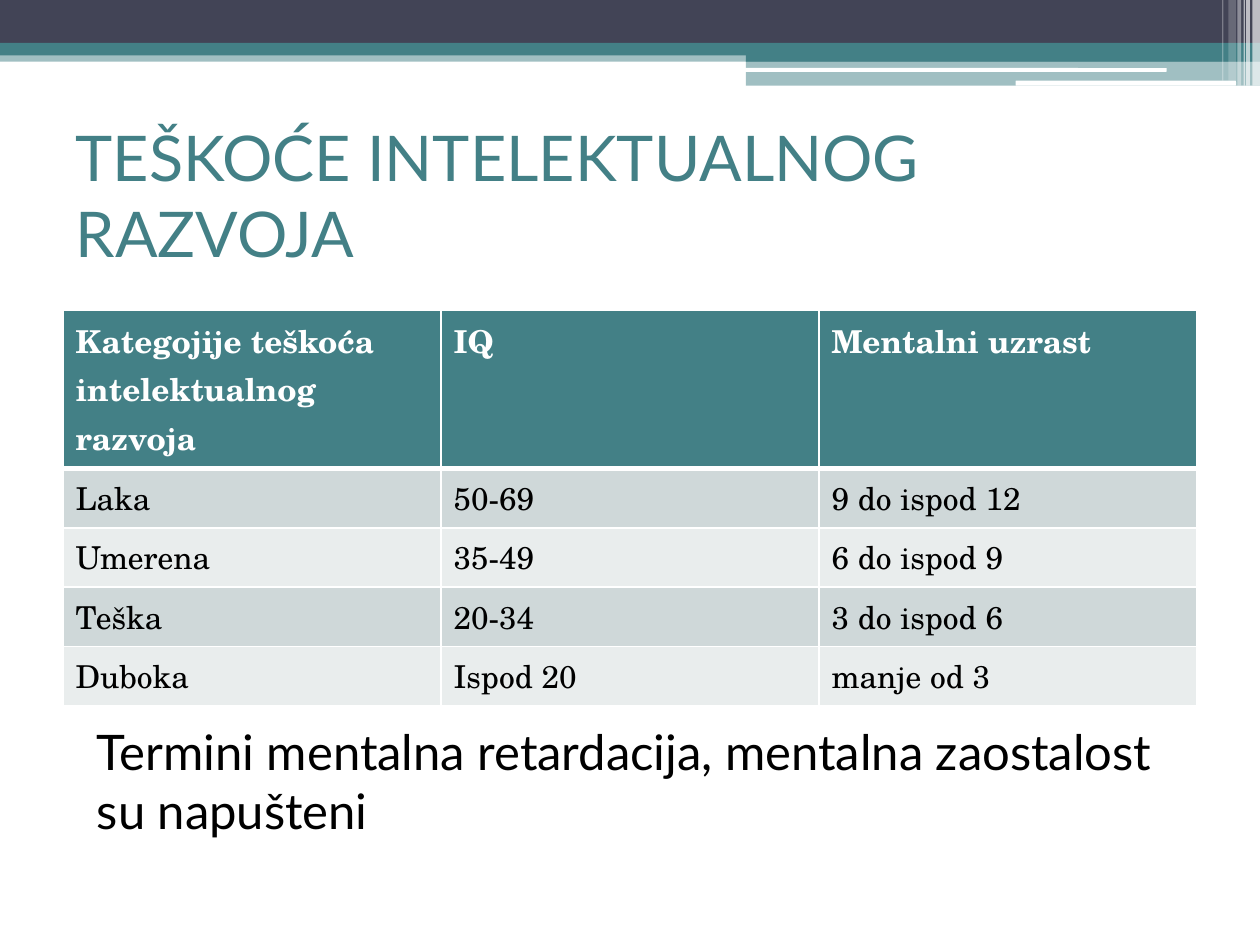
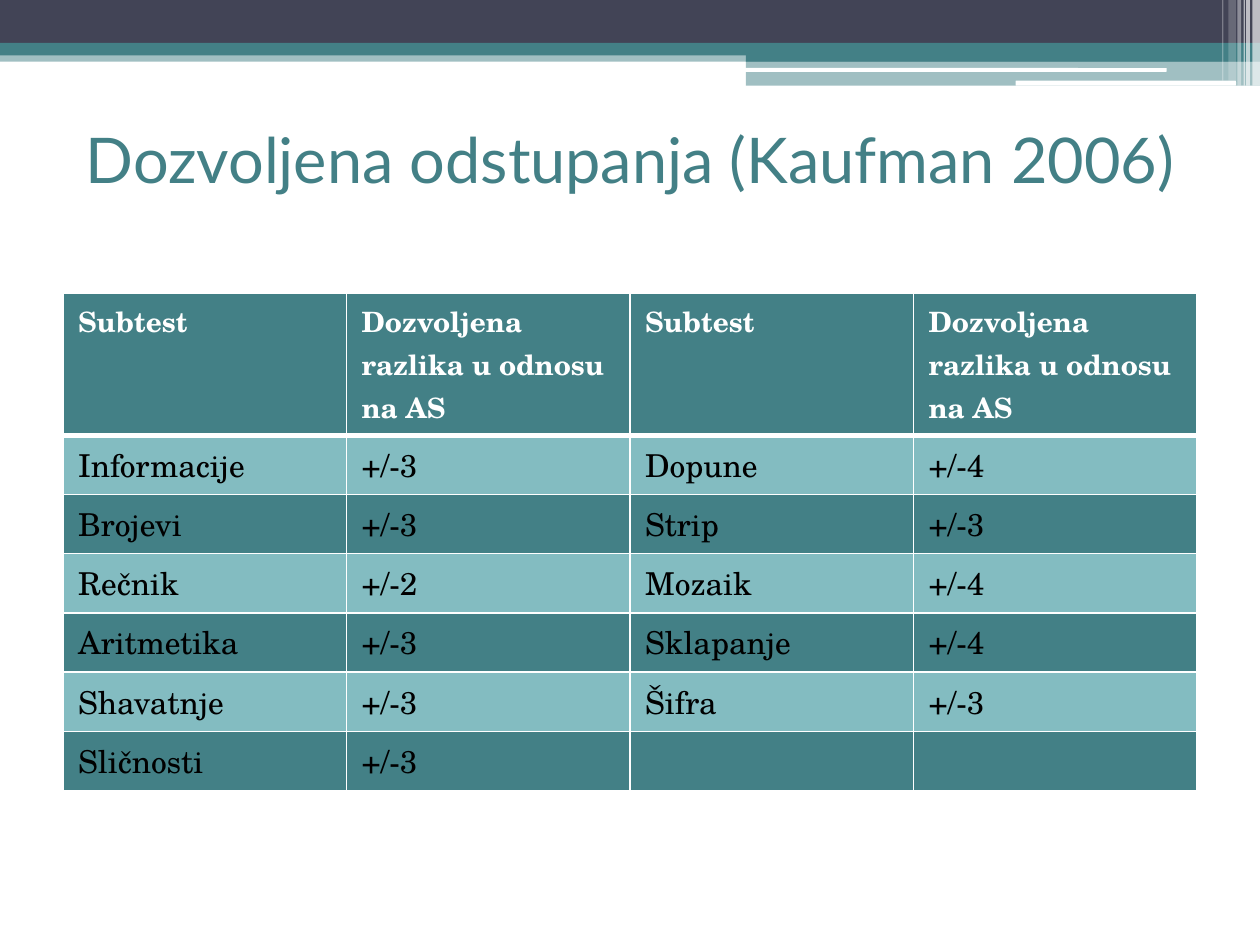
import pptx
import pptx.dml.color
import pptx.enum.shapes
import pptx.enum.text
import pptx.oxml
import pptx.oxml.ns
import pptx.util

TEAL, SLATE, WHITE, BLACK = "438086", "424456", "FFFFFF", "000000"
TITLE_FONT, TABLE_FONT = "Lato", "TeX Gyre Schola"
WIDTH, HEIGHT = 10, 7.5
MARGIN = 0.5
ROW_HEIGHT = 0.47
TITLE_ONLY_LAYOUT = 5

# left, top, width, height, colour, opacity in percent
BANDS = [
    (0, 0.4, WIDTH, 0.09, TEAL, 50),
    (0, 0, WIDTH, 0.34, SLATE, 100),
    (0, 0.34, WIDTH, 0.1, TEAL, 100),
    (5.92, 0.39, 4.08, 0.1, TEAL, 100),
    (5.92, 0.48, 4.08, 0.2, TEAL, 50),
]
ROUNDED_BARS = [
    (5.91, 0.54, 3.35, 0.03, WHITE, 100),
    (8.06, 0.64, 1.75, 0.04, WHITE, 100),
]
# left, width, height, opacity in percent
STRIPES = [
    (9.94, 0.06, 0.68, 65),
    (9.89, 0.03, 0.68, 65),
    (9.87, 0.01, 0.68, 60),
    (9.82, 0.03, 0.68, 40),
    (9.75, 0.06, 0.64, 20),
    (9.7, 0.01, 0.64, 30),
]

SLIDES = [
    {
        "title": "TEŠKOĆE INTELEKTUALNOG RAZVOJA",
        "title_box": (0.5, 1, 9, 1.08),
        "rows": [
            ("Kategojije teškoća intelektualnog razvoja", "IQ", "Mentalni uzrast"),
            ("Laka", "50-69", "9 do ispod 12"),
            ("Umerena", "35-49", "6 do ispod 9"),
            ("Teška", "20-34", "3 do ispod 6"),
            ("Duboka", "Ispod 20", "manje od 3"),
        ],
        "table_top": 2.46,
        "header_height": 1.25,
        "header_size": 18,
        "inset": 0.1,
        "row_fills": ("CFD8D9", "E9EDED"),
        "remark": "Termini mentalna retardacija, mentalna zaostalost su napušteni",
    },
    {
        "title": "Dozvoljena odstupanja (Kaufman 2006)",
        "title_box": (0.58, 0.67, 9, 1.17),
        "rows": [
            ("Subtest", "Dozvoljena razlika u odnosu na AS") * 2,
            ("Informacije", "+/-3", "Dopune", "+/-4"),
            ("Brojevi", "+/-3", "Strip", "+/-3"),
            ("Rečnik", "+/-2", "Mozaik", "+/-4"),
            ("Aritmetika", "+/-3", "Sklapanje", "+/-4"),
            ("Shavatnje", "+/-3", "Šifra", "+/-3"),
            ("Sličnosti", "+/-3", "", ""),
        ],
        "table_top": 2.33,
        "header_height": 1.12,
        "header_size": 16,
        "inset": 0.12,
        "row_fills": ("83BCC1", TEAL),
    },
]
REMARK_BOX = (0.67, 5.68, 8.75, 1.04)


def rgb(hex_colour):
    return pptx.dml.color.RGBColor.from_string(hex_colour)


def inches(*lengths):
    return [pptx.util.Inches(length) for length in lengths]


def write(frame, text, font, size, colour, bold=False):
    """Put left-aligned text in one format into a text frame."""
    paragraph = frame.paragraphs[0]
    paragraph.alignment = pptx.enum.text.PP_ALIGN.LEFT
    if not text:
        return
    run = paragraph.add_run()
    run.text = text
    run.font.color.rgb = rgb(colour)
    style = {"name": font, "size": pptx.util.Pt(size), "bold": bold}
    for attribute, value in style.items():
        setattr(run.font, attribute, value)


def add_bar(slide, kind, left, top, width, height, colour, opacity):
    bar = slide.shapes.add_shape(kind, *inches(left, top, width, height))
    bar.shadow.inherit = False
    bar.line.fill.background()
    bar.fill.solid()
    bar.fill.fore_color.rgb = rgb(colour)
    if opacity < 100:
        tint = bar.element.spPr.find(".//" + pptx.oxml.ns.qn("a:srgbClr"))
        tint.append(pptx.oxml.parse_xml(
            f'<a:alpha {pptx.oxml.ns.nsdecls("a")} val="{opacity * 1000}"/>'))


def add_header_bands(slide):
    kinds = pptx.enum.shapes.MSO_SHAPE
    for band in BANDS:
        add_bar(slide, kinds.RECTANGLE, *band)
    for bar in ROUNDED_BARS:
        add_bar(slide, kinds.ROUNDED_RECTANGLE, *bar)
    for left, width, height, opacity in STRIPES:
        add_bar(slide, kinds.RECTANGLE, left, 0, width, height, WHITE, opacity)


def add_title(slide, text, box):
    title = slide.shapes.title
    title.left, title.top, title.width, title.height = inches(*box)
    frame = title.text_frame
    frame.auto_size = pptx.enum.text.MSO_AUTO_SIZE.NONE
    frame.vertical_anchor = pptx.enum.text.MSO_ANCHOR.MIDDLE
    write(frame, text, TITLE_FONT, 36, TEAL)


def set_borders(cell, row):
    """White hairlines, with a thick rule between header and first row."""
    points = {"L": 1, "R": 1, "T": 3 if row == 1 else 1, "B": 3 if row == 0 else 1}
    properties = cell._tc.get_or_add_tcPr()
    for position, (side, width) in enumerate(points.items()):
        properties.insert(position, pptx.oxml.parse_xml(
            f'<a:ln{side} {pptx.oxml.ns.nsdecls("a")} w="{pptx.util.Pt(width)}">'
            f'<a:solidFill><a:srgbClr val="{WHITE}"/></a:solidFill></a:ln{side}>'))


def add_results_table(slide, content):
    rows = content["rows"]
    heights = [content["header_height"]] + [ROW_HEIGHT] * (len(rows) - 1)
    table = slide.shapes.add_table(
        len(rows), len(rows[0]),
        *inches(MARGIN, content["table_top"], WIDTH - 2 * MARGIN, sum(heights))).table
    table.horz_banding = False
    inset = pptx.util.Inches(content["inset"])
    for r, (texts, height) in enumerate(zip(rows, heights)):
        table.rows[r].height = pptx.util.Inches(height)
        is_header = r == 0
        fill = TEAL if is_header else content["row_fills"][(r - 1) % 2]
        size = content["header_size"] if is_header else 18
        colour = WHITE if is_header else BLACK
        for c, text in enumerate(texts):
            cell = table.cell(r, c)
            cell.margin_left = cell.margin_right = inset
            cell.fill.solid()
            cell.fill.fore_color.rgb = rgb(fill)
            set_borders(cell, r)
            write(cell.text_frame, text, TABLE_FONT, size, colour, is_header)


def add_remark(slide, text):
    frame = slide.shapes.add_textbox(*inches(*REMARK_BOX)).text_frame
    frame.word_wrap = True
    write(frame, text, TITLE_FONT, 28, BLACK)


def main():
    deck = pptx.Presentation()
    deck.slide_width, deck.slide_height = inches(WIDTH, HEIGHT)
    for content in SLIDES:
        slide = deck.slides.add_slide(deck.slide_layouts[TITLE_ONLY_LAYOUT])
        add_header_bands(slide)
        add_title(slide, content["title"], content["title_box"])
        add_results_table(slide, content)
        if "remark" in content:
            add_remark(slide, content["remark"])
    deck.save("out.pptx")


if __name__ == "__main__":
    main()
